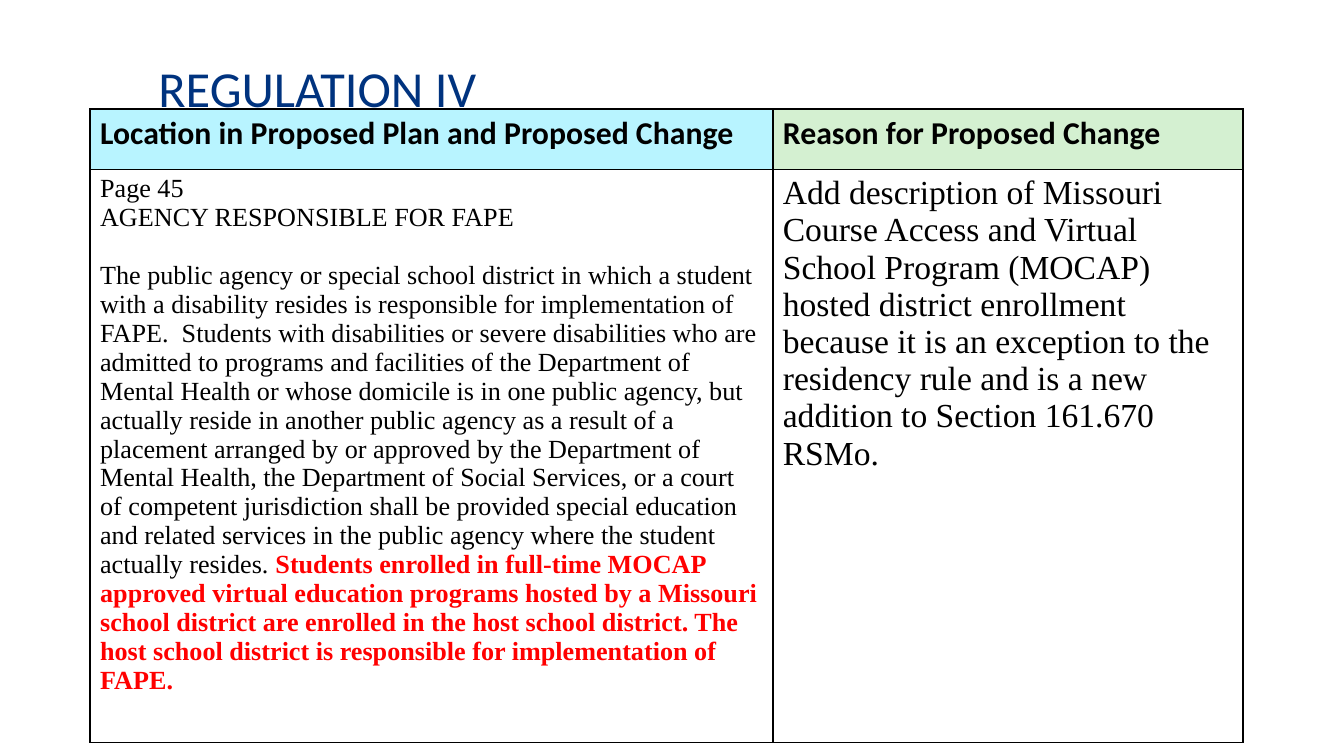
from dataclasses import dataclass

from lxml.etree import SubElement
from pptx import Presentation
from pptx.dml.color import RGBColor as Rgb
from pptx.enum.text import MSO_ANCHOR as Anchor
from pptx.oxml.ns import qn
from pptx.util import Inches, Pt


@dataclass(frozen=True)
class Theme:
    heading_font: str = "Calibri"
    body_font: str = "Times New Roman"
    title_color: str = "00337F"
    ink: str = "000000"
    added: str = "FF0000"
    plain: str = "FFFFFF"
    change_fill: str = "B8F4FF"
    reason_fill: str = "D4F0D1"
    title_size: float = 27
    header_size: float = 17
    change_size: float = 14
    reason_size: float = 18
    section_gap: float = 15.5
    border_width: float = 1


class SlideBuilder:
    def __init__(self, slide, theme):
        self.slide = slide
        self.theme = theme

    def run(self, paragraph, text, size, color, font, bold=False):
        run = paragraph.add_run()
        run.text = text
        run.font.size = Pt(size)
        run.font.name = font
        run.font.bold = bold
        run.font.color.rgb = Rgb.from_string(color)

    def title(self, text, left, top, width, height):
        box = self.slide.shapes.add_textbox(
            Inches(left), Inches(top), Inches(width), Inches(height))
        frame = box.text_frame
        frame.word_wrap = True
        frame.vertical_anchor = Anchor.MIDDLE
        self.run(frame.paragraphs[0], text, self.theme.title_size,
                 self.theme.title_color, self.theme.heading_font)

    def table(self, left, top, columns, rows):
        table = self.slide.shapes.add_table(
            len(rows), len(columns), Inches(left), Inches(top),
            Inches(sum(columns)), Inches(sum(rows))).table
        for column, width in zip(table.columns, columns):
            column.width = Inches(width)
        for row, height in zip(table.rows, rows):
            row.height = Inches(height)
        return table

    def cell(self, cell, fill):
        """Set the insets, borders and fill of a table cell."""
        cell.margin_left, cell.margin_right = Pt(5.4), Pt(5.8)
        cell.margin_top = cell.margin_bottom = Inches(0.04)
        properties = cell._tc.get_or_add_tcPr()
        for side in ("a:lnL", "a:lnR", "a:lnT", "a:lnB"):
            line = SubElement(properties, qn(side),
                              w=str(Pt(self.theme.border_width)))
            solid = SubElement(line, qn("a:solidFill"))
            SubElement(solid, qn("a:srgbClr"), val=self.theme.ink)
        cell.fill.solid()
        cell.fill.fore_color.rgb = Rgb.from_string(fill)

    def header(self, cell, text, fill):
        self.cell(cell, fill)
        self.run(cell.text_frame.paragraphs[0], text, self.theme.header_size,
                 self.theme.ink, self.theme.heading_font, bold=True)

    def body(self, cell, paragraphs, size):
        """Fill a cell; each paragraph is (gap before, [(text, is added)])."""
        self.cell(cell, self.theme.plain)
        frame = cell.text_frame
        for index, (gap, pieces) in enumerate(paragraphs):
            paragraph = frame.add_paragraph() if index else frame.paragraphs[0]
            paragraph.space_before = Pt(gap)
            for text, is_added in pieces:
                color = self.theme.added if is_added else self.theme.ink
                self.run(paragraph, text, size, color,
                         self.theme.body_font, bold=is_added)


CURRENT_RULE = (
    "The public agency or special school district in which a student with a "
    "disability resides is responsible for implementation of FAPE.  Students "
    "with disabilities or severe disabilities who are admitted to programs and "
    "facilities of the Department of Mental Health or whose domicile is in one "
    "public agency, but actually reside in another public agency as a result of "
    "a placement arranged by or approved by the Department of Mental Health, the "
    "Department of Social Services, or a court of competent jurisdiction shall "
    "be provided special education and related services in the public agency "
    "where the student actually resides. ")
ADDED_RULE = (
    "Students enrolled in full-time MOCAP approved virtual education programs "
    "hosted by a Missouri school district are enrolled in the host school "
    "district. The host school district is responsible for implementation of "
    "FAPE.")
REASON = (
    "Add description of Missouri Course Access and Virtual School Program "
    "(MOCAP) hosted district enrollment because it is an exception to the "
    "residency rule and is a new addition to Section 161.670 RSMo.")


def main():
    theme = Theme()
    deck = Presentation()
    deck.slide_width, deck.slide_height = Inches(10), Inches(10 * 9 / 16)
    builder = SlideBuilder(deck.slides.add_slide(deck.slide_layouts[6]), theme)

    builder.title("REGULATION IV", 1.08, 0.44, 8.92, 0.42)
    changes = builder.table(0.67, 0.81, columns=(5.08, 3.5), rows=(0.45, 4.13))
    builder.header(changes.cell(0, 0),
                   "Location in Proposed Plan and Proposed Change",
                   theme.change_fill)
    builder.header(changes.cell(0, 1), "Reason for Proposed Change",
                   theme.reason_fill)
    builder.body(changes.cell(1, 0), [
        (0, [("Page 45", False)]),
        (0, [("AGENCY RESPONSIBLE FOR FAPE", False)]),
        (theme.section_gap, [(CURRENT_RULE, False), (ADDED_RULE, True)]),
    ], theme.change_size)
    builder.body(changes.cell(1, 1), [(0, [(REASON, False)])],
                 theme.reason_size)

    deck.save("out.pptx")


if __name__ == "__main__":
    main()
